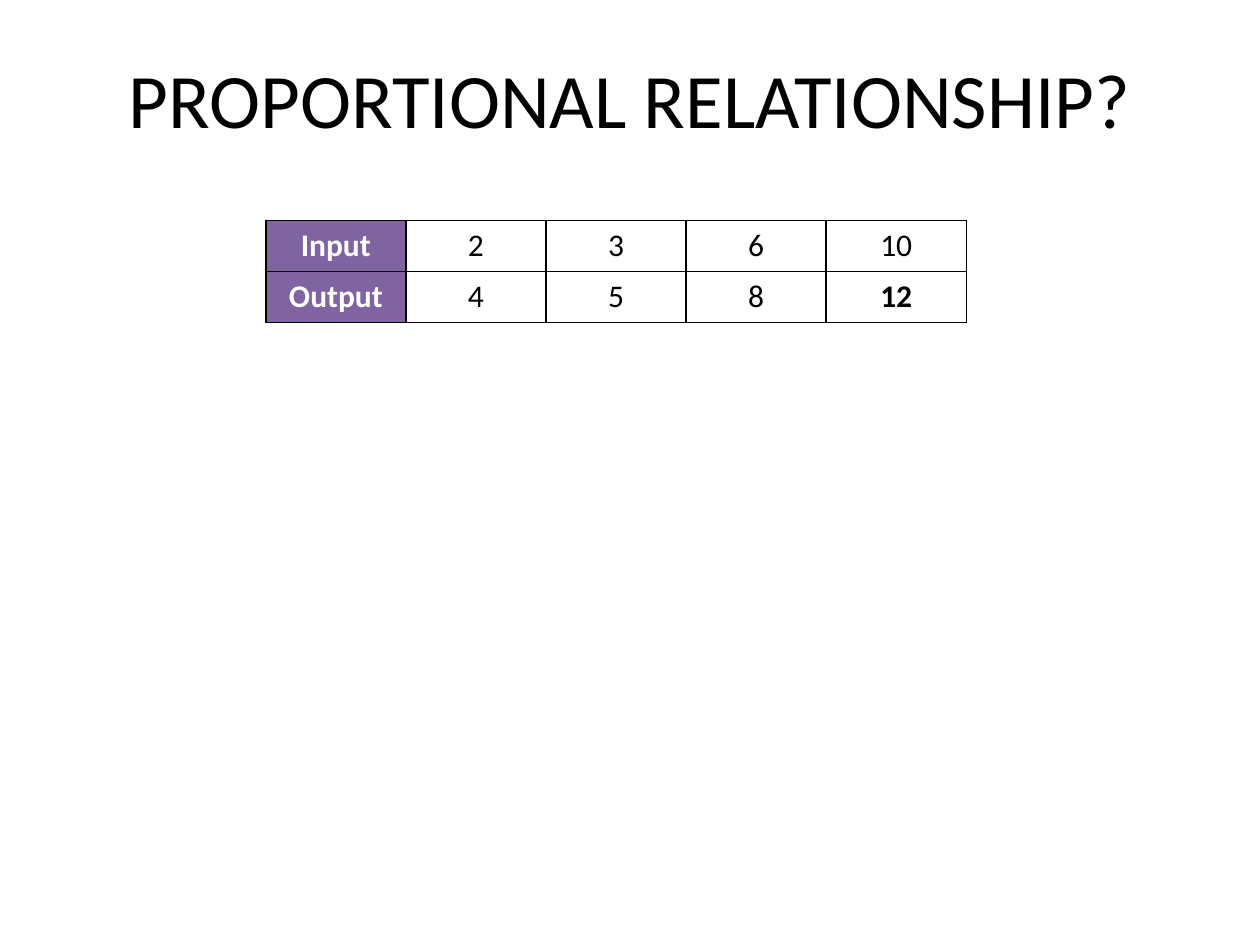
from lxml.etree import SubElement
from pptx import Presentation
from pptx.dml.color import RGBColor
from pptx.enum.text import MSO_ANCHOR, PP_ALIGN
from pptx.oxml.ns import qn
from pptx.util import Inches, Pt

COLORS = {"text": "000000", "header": "8064A2", "white": "FFFFFF", "border": "000000"}
FONT = "Calibri"
ROWS = [
    ["Input", "2", "3", "6", "10"],
    ["Output", "4", "5", "8", "12"],
]
BOLD_VALUE = "12"


def add_text(tf, text, size, color, bold=False):
    """Put one centred run in the first paragraph of a text frame."""
    p = tf.paragraphs[0]
    p.alignment = PP_ALIGN.CENTER
    r = p.add_run()
    r.text = text
    r.font.name = FONT
    r.font.size = Pt(size)
    r.font.bold = bold
    r.font.color.rgb = RGBColor.from_string(COLORS[color])


def add_borders(cell):
    tc_pr = cell._tc.get_or_add_tcPr()
    for side in ("a:lnL", "a:lnR", "a:lnT", "a:lnB"):
        ln = SubElement(tc_pr, qn(side), w=str(Pt(1)))
        fill = SubElement(ln, qn("a:solidFill"))
        SubElement(fill, qn("a:srgbClr"), val=COLORS["border"])


prs = Presentation()
prs.slide_width, prs.slide_height = Inches(10), Inches(7.5)
s = prs.slides.add_slide(prs.slide_layouts[5])

title = s.shapes.title
title.left, title.top = Inches(0.5), Inches(0.3)
title.width, title.height = Inches(9), Inches(0.95)
title.text_frame.vertical_anchor = MSO_ANCHOR.MIDDLE
add_text(title.text_frame, "PROPORTIONAL RELATIONSHIP?", 44, "text")

table = s.shapes.add_table(
    len(ROWS), len(ROWS[0]), Inches(2.11), Inches(1.75), Inches(5.56), Inches(0.81)
).table
table.first_row = False
table.horz_banding = False

for i, row in enumerate(ROWS):
    for j, text in enumerate(row):
        is_header = j == 0
        cell = table.cell(i, j)
        cell.vertical_anchor = MSO_ANCHOR.MIDDLE
        add_borders(cell)
        cell.fill.solid()
        cell.fill.fore_color.rgb = RGBColor.from_string(
            COLORS["header" if is_header else "white"]
        )
        add_text(cell.text_frame, text, 18, "white" if is_header else "text",
                 bold=is_header or text == BOLD_VALUE)

prs.save("out.pptx")
